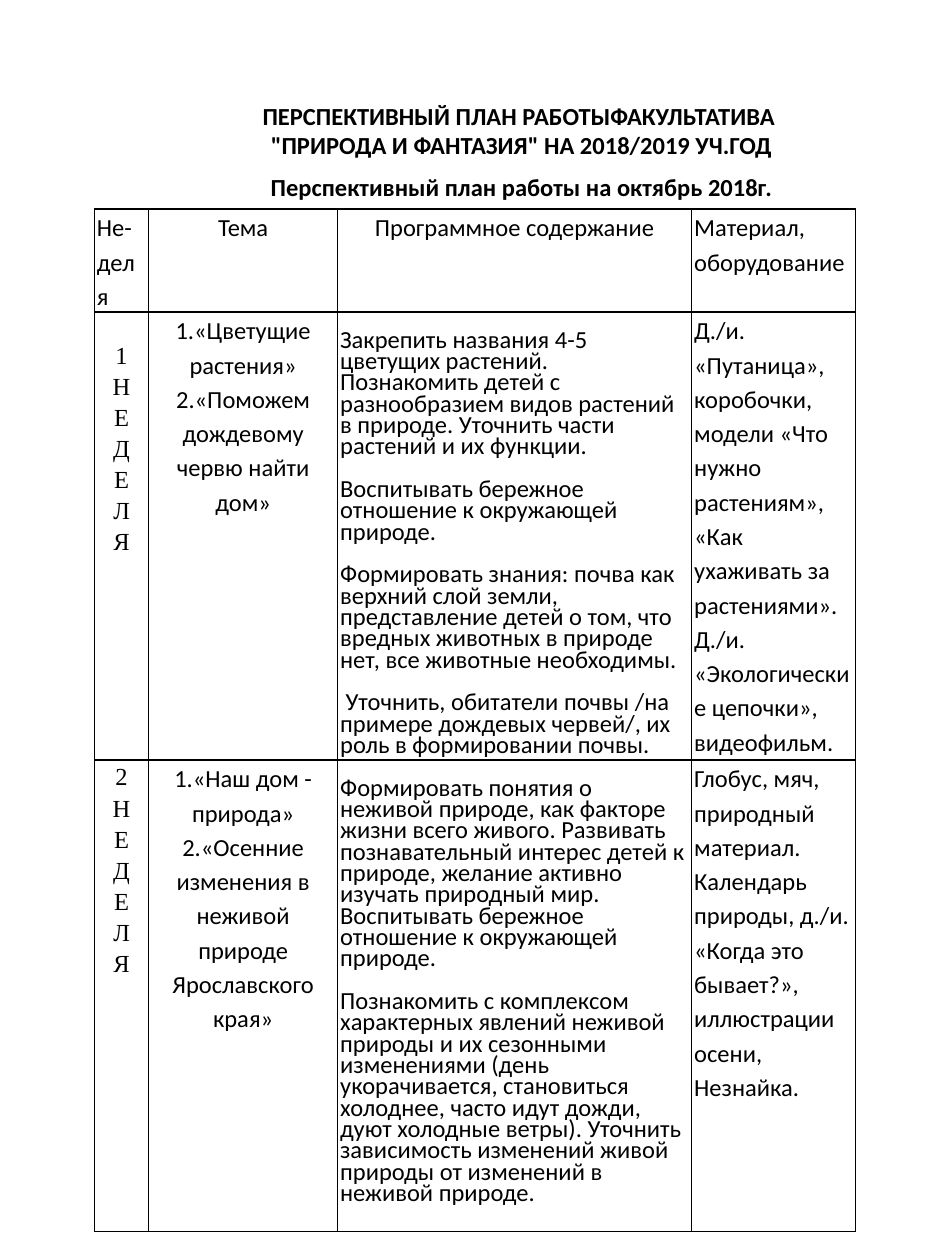
from dataclasses import dataclass

from lxml.etree import SubElement
from pptx import Presentation
from pptx.dml.color import RGBColor
from pptx.enum.text import MSO_ANCHOR, MSO_AUTO_SIZE, PP_ALIGN
from pptx.oxml.ns import qn
from pptx.util import Inches, Pt


@dataclass(frozen=True)
class Theme:
    ink: RGBColor = RGBColor(0, 0, 0)
    paper: RGBColor = RGBColor(255, 255, 255)
    font: str = "Calibri"
    week_font: str = "Times New Roman"
    size: Pt = Pt(14)
    heading_gap: Pt = Pt(7.3)
    loose: float = 1.15
    tight: Pt = Pt(12.2)
    border: Pt = Pt(1)


THEME = Theme()

HEADING = [
    "ПЕРСПЕКТИВНЫЙ ПЛАН РАБОТЫФАКУЛЬТАТИВА ",
    "\"ПРИРОДА И ФАНТАЗИЯ\" НА 2018/2019 УЧ.ГОД",
    "Перспективный план работы на октябрь 2018г.",
]
COLUMN_NAMES = ["Не-деля", "Тема", "Программное содержание", "Материал, оборудование"]
COLUMN_WIDTHS = [0.43, 1.5, 2.81, 1.3]
ROW_HEIGHTS = [0.76, 3.19, 3.74]
WEEK_TOPS = [0.21, 0]
CONTENT_TOP = 0.17

WEEKS = [
    (
        ["1.«Цветущие растения»", "2.«Поможем дождевому червю найти дом»"],
        [
            "Закрепить названия 4-5 цветущих растений. Познакомить детей с "
            "разнообразием видов растений в природе. Уточнить части растений и их функции.",
            "Воспитывать бережное отношение к окружающей природе.",
            "Формировать знания: почва как верхний слой земли, представление детей о том, "
            "что вредных животных в природе нет, все животные необходимы.",
            " Уточнить, обитатели почвы /на примере дождевых червей/, "
            "их роль в формировании почвы.",
        ],
        [
            "Д./и. «Путаница», коробочки, модели «Что нужно растениям», "
            "«Как ухаживать за растениями».",
            "Д./и. «Экологические цепочки», видеофильм.",
        ],
    ),
    (
        ["1.«Наш дом - природа»", "2.«Осенние изменения в неживой природе Ярославского края»"],
        [
            "Формировать понятия о неживой природе, как факторе жизни всего живого. "
            "Развивать познавательный интерес детей к природе, желание активно изучать "
            "природный мир. Воспитывать бережное отношение к окружающей природе.",
            "Познакомить с комплексом характерных явлений неживой природы и их сезонными "
            "изменениями (день укорачивается, становиться холоднее, часто идут дожди, дуют "
            "холодные ветры). Уточнить зависимость изменений живой природы от изменений в "
            "неживой природе.",
        ],
        [
            "Глобус, мяч, природный материал.",
            "Календарь природы, д./и. «Когда это бывает?», иллюстрации осени, Незнайка.",
        ],
    ),
]


def write_paragraphs(frame, texts, align=PP_ALIGN.LEFT, spacing=None, gap=Pt(0),
                     font=THEME.font, bold=False):
    for index, text in enumerate(texts):
        paragraph = frame.add_paragraph() if index else frame.paragraphs[0]
        paragraph.alignment = align
        paragraph.line_spacing = spacing
        if index:
            paragraph.space_before = gap
        run = paragraph.add_run()
        run.text = text
        run.font.name = font
        run.font.size = THEME.size
        run.font.bold = bold
        run.font.color.rgb = THEME.ink


def add_borders(cell):
    properties = cell._tc.get_or_add_tcPr()
    for position, side in enumerate(("a:lnL", "a:lnR", "a:lnT", "a:lnB")):
        line = properties.makeelement(qn(side), {"w": str(THEME.border)})
        fill = SubElement(line, qn("a:solidFill"))
        SubElement(fill, qn("a:srgbClr"), val=str(THEME.ink))
        properties.insert(position, line)


def fill_cell(cell, texts, top=0, spacing=THEME.loose, **style):
    cell.margin_left = cell.margin_right = Inches(0.02)
    cell.margin_top = Inches(top)
    cell.margin_bottom = Inches(0)
    cell.fill.solid()
    cell.fill.fore_color.rgb = THEME.paper
    add_borders(cell)
    write_paragraphs(cell.text_frame, texts, spacing=spacing, **style)


def add_plan_table(slide):
    table = slide.shapes.add_table(
        len(ROW_HEIGHTS), len(COLUMN_WIDTHS), Inches(0.75), Inches(1.66),
        Inches(sum(COLUMN_WIDTHS)), Inches(sum(ROW_HEIGHTS))).table
    for column, width in zip(table.columns, COLUMN_WIDTHS):
        column.width = Inches(width)
    for row, height in zip(table.rows, ROW_HEIGHTS):
        row.height = Inches(height)

    aligns = [PP_ALIGN.LEFT, PP_ALIGN.CENTER, PP_ALIGN.CENTER, PP_ALIGN.LEFT]
    for index, (name, align) in enumerate(zip(COLUMN_NAMES, aligns)):
        fill_cell(table.cell(0, index), [name], align=align)

    for number, (week, top) in enumerate(zip(WEEKS, WEEK_TOPS), start=1):
        topics, content, materials = week
        fill_cell(table.cell(number, 0), [str(number), *"НЕДЕЛЯ"], top=top,
                  align=PP_ALIGN.CENTER, font=THEME.week_font)
        fill_cell(table.cell(number, 1), topics, align=PP_ALIGN.CENTER)
        fill_cell(table.cell(number, 2), content, top=CONTENT_TOP,
                  spacing=THEME.tight, gap=THEME.tight)
        fill_cell(table.cell(number, 3), materials)


def add_heading(slide):
    box = slide.shapes.add_textbox(Inches(0.78), Inches(0.75), Inches(6.72), Inches(1.21))
    frame = box.text_frame
    frame.word_wrap = True
    frame.auto_size = MSO_AUTO_SIZE.SHAPE_TO_FIT_TEXT
    frame.vertical_anchor = MSO_ANCHOR.MIDDLE
    frame.margin_bottom = Inches(0.36)
    write_paragraphs(frame, HEADING, align=PP_ALIGN.CENTER, bold=True)
    frame.paragraphs[-1].space_before = THEME.heading_gap


def main():
    presentation = Presentation()
    presentation.slide_width = Inches(7.5)
    presentation.slide_height = Inches(10)
    slide = presentation.slides.add_slide(presentation.slide_layouts[6])
    add_plan_table(slide)
    add_heading(slide)
    presentation.save("out.pptx")


if __name__ == "__main__":
    main()
